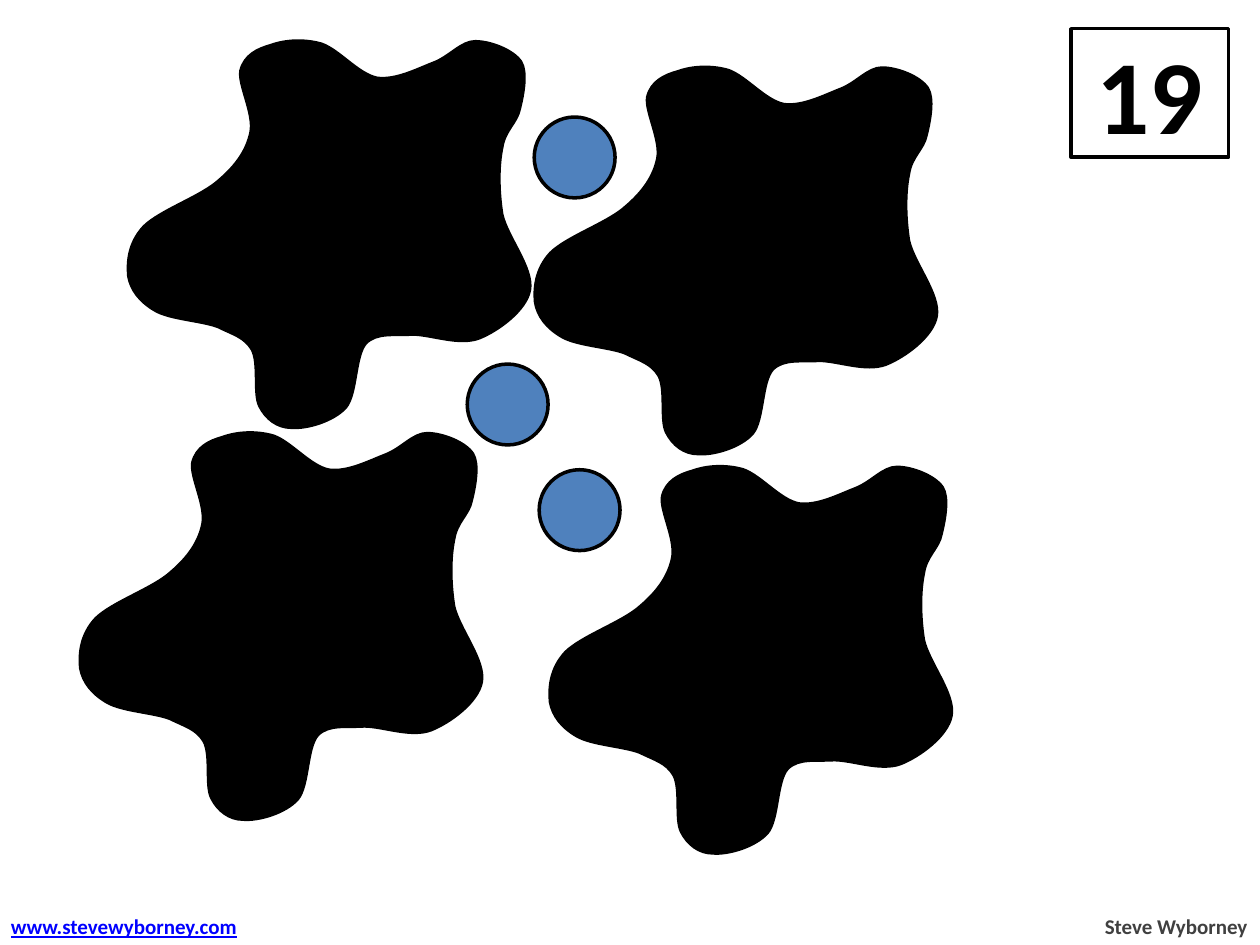
from dataclasses import dataclass

from lxml.etree import SubElement
from pptx import Presentation
from pptx.dml.color import RGBColor
from pptx.enum.shapes import MSO_SHAPE as Preset
from pptx.enum.text import MSO_ANCHOR as Anchor, MSO_AUTO_SIZE as AutoSize, PP_ALIGN as Align
from pptx.oxml.ns import qn
from pptx.util import Cm, Pt


@dataclass(frozen=True)
class Theme:
    """Colours, type sizes and line width of the slide."""
    font: str = "Calibri"
    ink: str = "000000"
    paper: str = "FFFFFF"
    dot: str = "4F81BD"
    link: str = "0000FF"
    credit: str = "404040"
    number_size: int = 60
    footer_size: int = 12
    line_width: int = 2


THEME = Theme()
SLIDE_BOX = (0, 0, 25.4, 19.05)
NUMBER_BOX = (21.59, 0.58, 3.18, 2.59)
DOT_SIZE = 1.63
SPLAT_SIZE = (8.18, 7.85)
SPLAT_UNIT = Cm(0.0254)

DOT_CORNERS = [
    (5.66, 2.08), (3.81, 4.19), (2.51, 12.17), (8.15, 3.43), (7.44, 9.17),
    (10.77, 2.36), (5.61, 5.84), (6.1, 12.62), (10.87, 9.47), (11.89, 4.95),
    (11.68, 12.83), (9.42, 7.34), (13.51, 7.11), (14.33, 10.39), (4.45, 9.42),
    (14, 14.45), (16.69, 12.57), (14.3, 3.43), (16.51, 5.11),
]
SPLAT_CORNERS = [(2.57, 0.79), (10.77, 1.32), (11.07, 9.37), (1.6, 8.69)]
SPLAT_START = (22, 213)
SPLAT_CURVES = [
    ((10, 206), (3, 197), (1, 186)), ((0, 175), (1, 160), (13, 147)),
    ((26, 134), (59, 123), (73, 110)), ((87, 98), (95, 86), (98, 72)),
    ((101, 57), (88, 34), (90, 23)), ((93, 11), (103, 6), (114, 3)),
    ((125, -1), (140, -2), (154, 2)), ((168, 7), (183, 26), (198, 29)),
    ((213, 31), (230, 22), (243, 17)), ((256, 12), (265, 0), (276, 0)),
    ((288, 0), (306, 7), (312, 16)), ((317, 24), (314, 41), (311, 53)),
    ((309, 64), (299, 70), (297, 84)), ((294, 98), (294, 118), (297, 137)),
    ((301, 155), (322, 180), (319, 197)), ((316, 213), (294, 229), (279, 235)),
    ((263, 241), (241, 232), (226, 232)), ((212, 233), (198, 230), (189, 239)),
    ((180, 249), (182, 279), (173, 290)), ((163, 301), (142, 307), (130, 306)),
    ((119, 306), (110, 299), (105, 289)), ((100, 279), (105, 255), (99, 244)),
    ((93, 234), (84, 232), (72, 226)), ((59, 221), (34, 220), SPLAT_START),
]


def style_shape(shape, fill):
    """Give a shape its fill and the common outline, without shadow."""
    shape.shadow.inherit = False
    shape.fill.solid()
    shape.fill.fore_color.rgb = RGBColor.from_string(fill)
    shape.line.color.rgb = RGBColor.from_string(THEME.ink)
    shape.line.width = Pt(THEME.line_width)


def write_text(shape, text, *, size, color, align=Align.LEFT, underline=False):
    """Write one bold formatted line into a shape."""
    paragraph = shape.text_frame.paragraphs[0]
    paragraph.alignment = align
    run = paragraph.add_run()
    run.text = text
    run.font.name = THEME.font
    run.font.size = Pt(size)
    run.font.bold = True
    run.font.underline = underline
    run.font.color.rgb = RGBColor.from_string(color)


def add_preset(slide, preset, box, fill):
    """Add a styled preset shape in a box given in centimetres."""
    shape = slide.shapes.add_shape(preset, *map(Cm, box))
    style_shape(shape, fill)
    return shape


def add_number(slide, box, text):
    """Add the framed total."""
    shape = add_preset(slide, Preset.RECTANGLE, box, THEME.paper)
    shape.text_frame.vertical_anchor = Anchor.MIDDLE
    write_text(shape, text, size=THEME.number_size, color=THEME.ink, align=Align.CENTER)


def add_footer(slide, box):
    """Add the web address and the author along the bottom of a box."""
    left, top, width, height = box
    address_width, author_width, line_height = 5.2, 3.4, 0.76
    baseline = top + height - line_height
    entries = [
        (left - 0.03, address_width, "www.stevewyborney.com",
         dict(color=THEME.link, underline=True)),
        (left + width - author_width, author_width, "Steve Wyborney",
         dict(color=THEME.credit, align=Align.RIGHT)),
    ]
    for entry_left, entry_width, text, text_format in entries:
        shape = slide.shapes.add_textbox(
            Cm(entry_left), Cm(baseline), Cm(entry_width), Cm(line_height))
        shape.text_frame.word_wrap = False
        shape.text_frame.auto_size = AutoSize.SHAPE_TO_FIT_TEXT
        write_text(shape, text, size=THEME.footer_size, **text_format)


def add_dots(slide, box):
    """Scatter the counting dots relative to a box."""
    left, top = box[:2]
    for x, y in DOT_CORNERS:
        add_preset(slide, Preset.OVAL, (left + x, top + y, DOT_SIZE, DOT_SIZE), THEME.dot)


def curve_segments(shape):
    """Join each three line segments of a freeform into one Bézier curve."""
    segments = list(shape.element.iter(qn("a:lnTo")))
    for start in range(0, len(segments), 3):
        first, *others = segments[start:start + 3]
        curve = SubElement(first.getparent(), qn("a:cubicBezTo"))
        first.addprevious(curve)
        for segment in (first, *others):
            curve.append(segment[0])
            segment.getparent().remove(segment)


def add_splat(slide, box):
    """Add one splat, drawn a quarter turn round and turned back, centred in a box."""
    left, top, width, height = map(Cm, box)
    start, *points = [(-y, x) for x, y in
                      [SPLAT_START, *(point for curve in SPLAT_CURVES for point in curve)]]
    builder = slide.shapes.build_freeform(*start, scale=SPLAT_UNIT)
    builder.add_line_segments(points, close=True)
    shape = builder.convert_to_shape()
    curve_segments(shape)
    shape.left = left + (width - shape.width) // 2
    shape.top = top + (height - shape.height) // 2
    shape.rotation = 270
    style_shape(shape, THEME.ink)


def build_splat_slide(presentation, box):
    """Build the slide on which splats cover part of the dots."""
    slide = presentation.slides.add_slide(presentation.slide_layouts[6])
    left, top = box[:2]
    number_left, number_top, *number_size = NUMBER_BOX
    add_number(slide, (left + number_left, top + number_top, *number_size), "19")
    add_footer(slide, box)
    add_dots(slide, box)
    for x, y in SPLAT_CORNERS:
        add_splat(slide, (left + x, top + y, *SPLAT_SIZE))


def main():
    """Create and save the presentation."""
    presentation = Presentation()
    presentation.slide_width, presentation.slide_height = map(Cm, SLIDE_BOX[2:])
    build_splat_slide(presentation, SLIDE_BOX)
    presentation.save("out.pptx")


if __name__ == "__main__":
    main()
